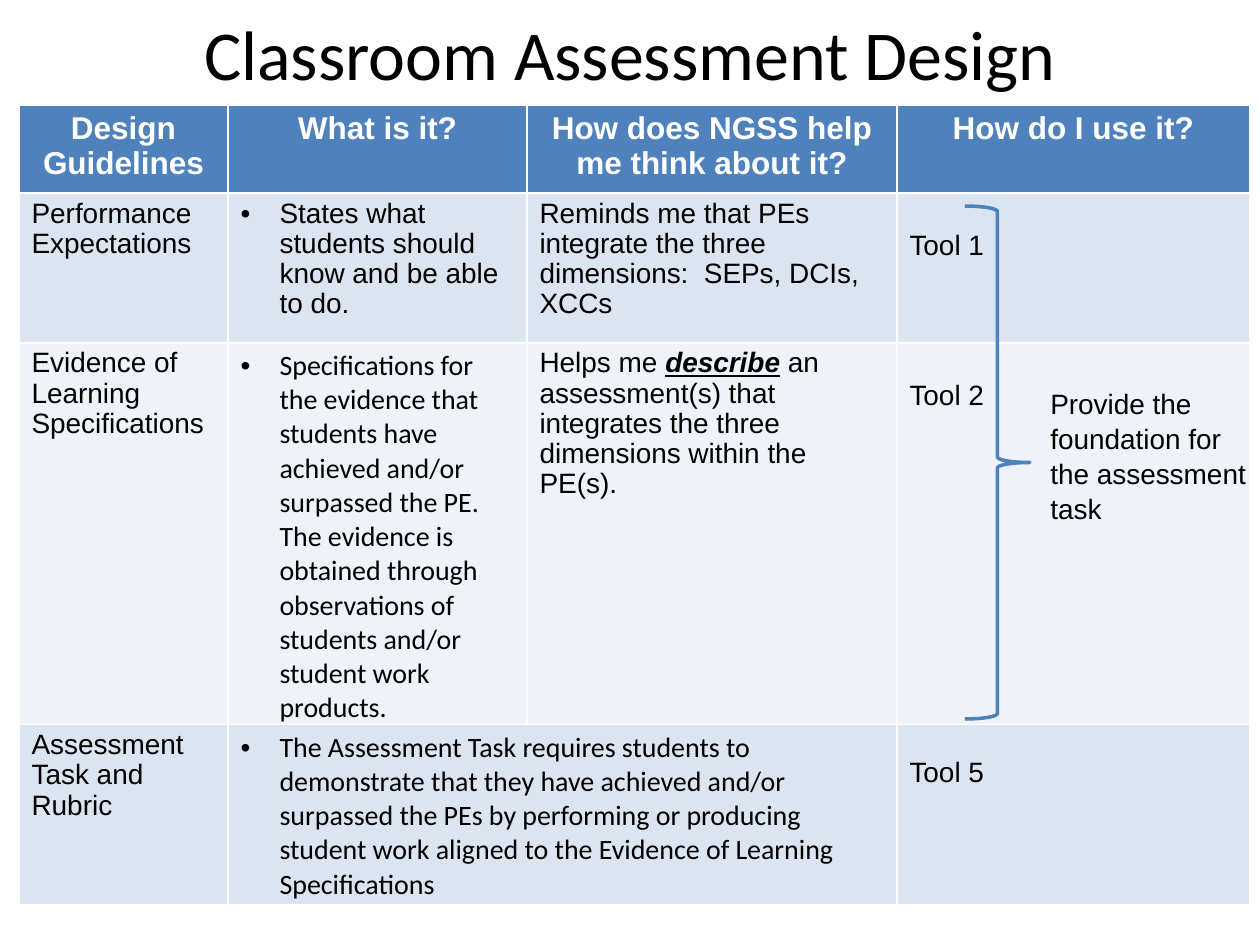
"""Build the Classroom Assessment Design slide with its guideline table."""
import pptx
import pptx.util
import pptx.dml.color
import pptx.enum.shapes
import pptx.enum.text
import lxml.etree

PX = 914400 // 126
BLUE, BAND, PALE, WHITE, BLACK = "4F81BD", "DBE5F1", "EFF3F9", "FFFFFF", "000000"
TITLE = "Classroom Assessment Design"
NOTE = "Provide the foundation for the assessment task"
HEADERS = ["Design Guidelines", "What is it?", "How does NGSS help me think about it?", "How do I use it?"]
TIGHT = {"spacing": 0.97}
BULLET = {"bullet": True}
CALIBRI_BULLET = {"bullet": True, "font": "Calibri"}
ROWS = [
    (BAND, [
        (["Performance Expectations"], TIGHT),
        (["States what students should know and be able to do."], {**BULLET, **TIGHT}),
        (["Reminds me that PEs integrate the three dimensions:  SEPs, DCIs, XCCs"], TIGHT),
        (["Tool 1"], {"top": 37}),
    ]),
    (PALE, [
        (["Evidence of Learning Specifications"], TIGHT),
        (["Specifications for the evidence that students have achieved and/or surpassed the PE. "
          "The evidence is obtained through observations of students and/or student work products."],
         CALIBRI_BULLET),
        ([["Helps me ", ("describe",),
           " an  assessment(s) that integrates the three dimensions within the PE(s)."]], TIGHT),
        (["Tool 2"], {"top": 37}),
    ]),
    (BAND, [
        (["Assessment Task and", "Rubric"], TIGHT),
        (["The Assessment Task requires students to demonstrate that they have achieved and/or "
          "surpassed the PEs by performing or producing student work aligned to the Evidence of "
          "Learning Specifications"], CALIBRI_BULLET),
        None,
        (["Tool 5"], {"top": 33}),
    ]),
]
COLUMN_WIDTHS = [209, 299, 370, 353]
ROW_HEIGHTS = [86, 150, 369, 141]


def px(*lengths):
    """Turn px lengths into EMU."""
    return [length * PX for length in lengths]


def color(value):
    """Turn a hex string into a colour."""
    return pptx.dml.color.RGBColor.from_string(value)


def add_bullet(paragraph):
    """Give a paragraph a hanging round bullet."""
    properties = paragraph._p.get_or_add_pPr()
    properties.set("marL", str(39 * PX))
    properties.set("indent", str(-39 * PX))
    namespace = pptx.oxml.ns.nsdecls("a")
    for xml in (f'<a:buFont {namespace} typeface="Arial"/>', f'<a:buChar {namespace} char="•"/>'):
        properties.append(pptx.oxml.parse_xml(xml))


def write(frame, paragraphs, size=16, font="Arial", fill=BLACK, bold=False,
          align="LEFT", spacing=None, bullet=False):
    """Write paragraphs of runs; a run in a tuple is emphasised."""
    frame.word_wrap = True
    for index, runs in enumerate(paragraphs):
        paragraph = frame.add_paragraph() if index else frame.paragraphs[0]
        paragraph.alignment = getattr(pptx.enum.text.PP_ALIGN, align)
        if spacing:
            paragraph.line_spacing = spacing
        if bullet:
            add_bullet(paragraph)
        for content in [runs] if isinstance(runs, str) else runs:
            emphasised = isinstance(content, tuple)
            run = paragraph.add_run()
            run.text = content[0] if emphasised else content
            run.font.name, run.font.size = font, pptx.util.Pt(size)
            run.font.color.rgb = color(fill)
            run.font.bold = bold or emphasised
            if emphasised:
                run.font.italic = run.font.underline = True


def fill_cell(cell, background, paragraphs, top=6, **style):
    """Fill one table cell with colour and text."""
    cell.fill.solid()
    cell.fill.fore_color.rgb = color(background)
    cell.margin_top = top * PX
    write(cell.text_frame, paragraphs, **style)


def add_guidelines(slide):
    """Add the guideline table."""
    table = slide.shapes.add_table(4, 4, *px(19, 105, 1230, 801)).table
    for column, width in zip(table.columns, COLUMN_WIDTHS):
        column.width = width * PX
    for row, height in zip(table.rows, ROW_HEIGHTS):
        row.height = height * PX
    for column, header in enumerate(HEADERS):
        fill_cell(table.cell(0, column), BLUE, [header], size=18, fill=WHITE, bold=True, align="CENTER")
    table.cell(3, 1).merge(table.cell(3, 2))
    for row, (background, cells) in enumerate(ROWS, 1):
        for column, content in enumerate(cells):
            if content:
                paragraphs, style = content
                fill_cell(table.cell(row, column), background, paragraphs, **style)


def main():
    """Build and save the slide."""
    presentation = pptx.Presentation()
    presentation.slide_width, presentation.slide_height = px(1260, 945)
    slide = presentation.slides.add_slide(presentation.slide_layouts[6])
    title = slide.shapes.add_textbox(*px(63, 0, 1134, 105)).text_frame
    title.vertical_anchor = pptx.enum.text.MSO_ANCHOR.MIDDLE
    write(title, [TITLE], size=40, font="Calibri", align="CENTER")
    add_guidelines(slide)
    brace = slide.shapes.add_shape(pptx.enum.shapes.MSO_SHAPE.RIGHT_BRACE, *px(965, 206, 65, 513))
    brace.shadow.inherit = False
    brace.fill.background()
    brace.line.color.rgb = color(BLUE)
    brace.line.width = pptx.util.Pt(2)
    note = slide.shapes.add_textbox(*px(1038, 379, 239, 192)).text_frame
    write(note, [NOTE], spacing=1.04)
    presentation.save("out.pptx")


if __name__ == "__main__":
    main()
